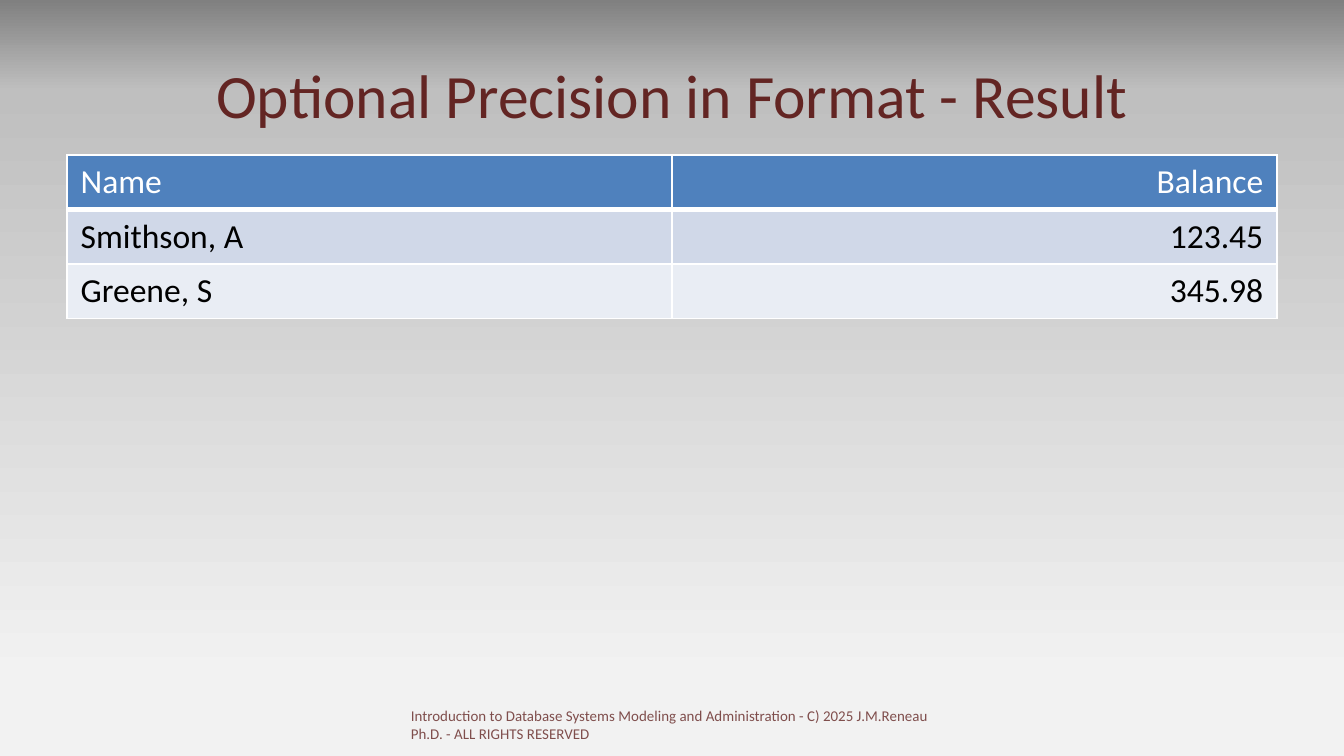
from copy import deepcopy

from lxml import etree
from pptx import Presentation
from pptx.dml.color import RGBColor
from pptx.enum import text
from pptx.oxml import ns
from pptx.util import Pt


def colour(value):
    return RGBColor.from_string(value)


def add_span(para, words, size, value):
    span = para.add_run()
    span.text = words
    span.font.name = "Calibri"
    span.font.size = Pt(size)
    span.font.color.rgb = colour(value)
    return span


deck = Presentation()
deck.slide_width, deck.slide_height = Pt(720), Pt(405)
page = deck.slides.add_slide(deck.slide_layouts[5])

# Background: grey gradient from top to bottom
fill = page.background.fill
fill.gradient()
fill.gradient_angle = 270
stop_list = next(page.element.iter(ns.qn("a:gsLst")))
stop_list.append(deepcopy(stop_list[-1]))
stops = [(0, "808080"), (0.12, "BFBFBF"), (0.9, "F2F2F2")]
for stop, (position, value) in zip(fill.gradient_stops, stops):
    stop.position = position
    stop.color.rgb = colour(value)

# Title
title = page.shapes.title
title.left, title.top, title.width, title.height = Pt(36), Pt(16.5), Pt(648), Pt(67.5)
title.text_frame.vertical_anchor = text.MSO_ANCHOR.MIDDLE
para = title.text_frame.paragraphs[0]
para.alignment = text.PP_ALIGN.CENTER
add_span(para, "Optional Precision in Format - Result", 33, "632523")

# Balance table
rows = [("Name", "Balance"), ("Smithson, A", "123.45"), ("Greene, S", "345.98")]
row_styles = [("4F81BD", "FFFFFF"), ("D0D8E8", "000000"), ("E9EDF4", "000000")]
alignments = [text.PP_ALIGN.LEFT, text.PP_ALIGN.RIGHT]
row_height = 29.2
table = page.shapes.add_table(
    len(rows), 2, Pt(36), Pt(83), Pt(648), Pt(row_height * len(rows))
).table
for r, (values, (cell_fill, font_colour)) in enumerate(zip(rows, row_styles)):
    table.rows[r].height = Pt(row_height)
    for c, value in enumerate(values):
        cell = table.cell(r, c)
        properties = cell._tc.get_or_add_tcPr()
        for side in ("lnL", "lnR", "lnT", "lnB"):
            width = 3 if r == 0 and side == "lnB" else 1
            line = etree.SubElement(properties, ns.qn("a:" + side), w=str(Pt(width)))
            solid = etree.SubElement(line, ns.qn("a:solidFill"))
            etree.SubElement(solid, ns.qn("a:srgbClr"), val="FFFFFF")
        cell.fill.solid()
        cell.fill.fore_color.rgb = colour(cell_fill)
        para = cell.text_frame.paragraphs[0]
        para.alignment = alignments[c]
        add_span(para, value, 18, font_colour)

# Footer in 80 % opaque text
footer = page.shapes.add_textbox(Pt(213), Pt(375), Pt(292.5), Pt(21.6))
footer.text_frame.word_wrap = True
span = add_span(
    footer.text_frame.paragraphs[0],
    "Introduction to Database Systems Modeling and Administration - "
    "C) 2025 J.M.Reneau Ph.D. - ALL RIGHTS RESERVED",
    8,
    "632523",
)
footer_colour = next(span._r.iter(ns.qn("a:srgbClr")))
etree.SubElement(footer_colour, ns.qn("a:alpha"), val="80000")

deck.save("out.pptx")
